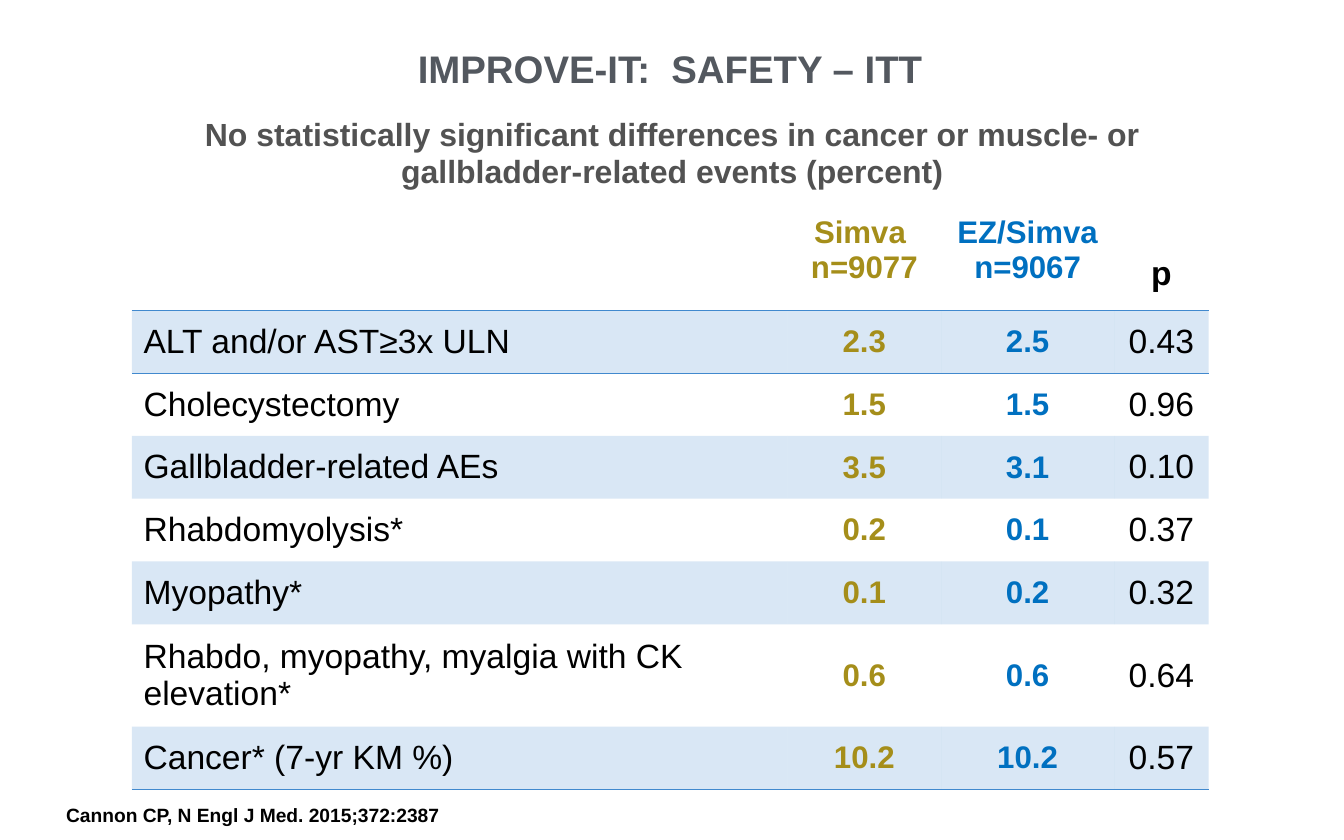
import pptx
import pptx.dml.color
import pptx.enum.text
import pptx.oxml
import pptx.oxml.ns
import pptx.util
import lxml.etree

Cm = pptx.util.Cm
Anchor = pptx.enum.text.MSO_ANCHOR
Align = pptx.enum.text.PP_ALIGN
AutoSize = pptx.enum.text.MSO_AUTO_SIZE
qn = pptx.oxml.ns.qn

GREY, DARK_GREY, BLACK = "53585F", "525252", "000000"
GOLD, BLUE, RULE = "A58E1A", "0070C0", "4189CE"

HEADINGS = ["", "Simva \nn=9077", "EZ/Simva\nn=9067", "p"]
EVENTS = [
    ["ALT and/or AST≥3x ULN", "2.3", "2.5", "0.43"],
    ["Cholecystectomy", "1.5", "1.5", "0.96"],
    ["Gallbladder-related AEs", "3.5", "3.1", "0.10"],
    ["Rhabdomyolysis*", "0.2", "0.1", "0.37"],
    ["Myopathy*", "0.1", "0.2", "0.32"],
    ["Rhabdo, myopathy, myalgia with CK elevation*", "0.6", "0.6", "0.64"],
    ["Cancer* (7-yr KM %)", "10.2", "10.2", "0.57"],
]
COLUMN_WIDTHS = [28.9, 6.78, 7.62, 4.17]
COLUMN_STYLES = [(42, BLACK), (39, GOLD), (39, BLUE), (42, BLACK)]
HEADING_HEIGHT, EVENT_HEIGHT = 4.65, 2.77
NO_STYLE = "{2D5ABB26-0587-4C30-8999-92F81FD0307C}"


def colour(value):
    return pptx.dml.color.RGBColor.from_string(value)


class SafetySlide:
    font = "Arial"

    def __init__(self, deck):
        self.slide = deck.slides.add_slide(deck.slide_layouts[1])

    def set_text(self, frame, text, size, ink, bold=True, align=Align.CENTER):
        frame.text = text
        for paragraph in frame.paragraphs:
            paragraph.alignment = align
            for run in paragraph.runs:
                run.font.name = self.font
                run.font.size = pptx.util.Pt(size)
                run.font.bold = bold
                run.font.color.rgb = colour(ink)

    def inset(self, target, side, top):
        target.margin_left = target.margin_right = Cm(side)
        target.margin_top = target.margin_bottom = Cm(top)

    def heading(self, holder, box, text, size, ink):
        holder.left, holder.top, holder.width, holder.height = map(Cm, box)
        frame = holder.text_frame
        self.set_text(frame, text, size, ink)
        self.inset(frame, 0.18, 0.18)
        frame.vertical_anchor = Anchor.MIDDLE
        frame.word_wrap = True
        frame.auto_size = AutoSize.NONE
        return frame.paragraphs[0]

    def title(self, box, text):
        self.heading(self.slide.shapes.title, box, text, 48, GREY)

    def finding(self, box, text):
        paragraph = self.heading(self.slide.placeholders[1], box, text, 40, DARK_GREY)
        paragraph.line_spacing = 0.95
        paragraph.space_before = pptx.util.Pt(0)
        properties = paragraph._p.get_or_add_pPr()
        properties.set("marL", "0")
        properties.set("indent", "0")
        lxml.etree.SubElement(properties, qn("a:buNone"))

    def citation(self, box, text):
        frame = self.slide.shapes.add_textbox(*map(Cm, box)).text_frame
        self.set_text(frame, text, 24, BLACK)
        self.inset(frame, 0.38, 0.2)
        frame.word_wrap = True
        frame.auto_size = AutoSize.SHAPE_TO_FIT_TEXT

    def rule(self, cell, edge):
        line = lxml.etree.SubElement(
            cell._tc.get_or_add_tcPr(), qn("a:" + edge), w=str(pptx.util.Pt(1)))
        fill = lxml.etree.SubElement(line, qn("a:solidFill"))
        lxml.etree.SubElement(fill, qn("a:srgbClr"), val=RULE)

    def tint(self, cell):
        cell.fill.solid()
        cell.fill.fore_color.rgb = colour(RULE)
        shade = cell._tc.tcPr.find(qn("a:solidFill")).find(qn("a:srgbClr"))
        lxml.etree.SubElement(shade, qn("a:alpha"), val="20000")

    def cell(self, cell, text, row, column, last_row):
        size, ink = COLUMN_STYLES[column]
        is_heading = row == 0
        self.inset(cell, 0.51, 0.48)
        cell.vertical_anchor = Anchor.TOP if is_heading else Anchor.MIDDLE
        if text:
            self.set_text(cell.text_frame, text, size, ink,
                          bold=is_heading or ink != BLACK,
                          align=Align.CENTER if column else Align.LEFT)
        if is_heading and column == len(COLUMN_WIDTHS) - 1:
            cell.vertical_anchor = Anchor.BOTTOM
            cell.margin_bottom = Cm(0.76)
        if row == 1:
            self.rule(cell, "lnT")
        if row in (0, last_row):
            self.rule(cell, "lnB")
        if row % 2:
            self.tint(cell)
        else:
            cell.fill.background()

    def events(self, left, top, rows):
        heights = [HEADING_HEIGHT] + [EVENT_HEIGHT] * (len(rows) - 1)
        table = self.slide.shapes.add_table(
            len(rows), len(COLUMN_WIDTHS), Cm(left), Cm(top),
            Cm(sum(COLUMN_WIDTHS)), Cm(sum(heights))).table
        table._tbl.tblPr.find(qn("a:tableStyleId")).text = NO_STYLE
        for column, width in zip(table.columns, COLUMN_WIDTHS):
            column.width = Cm(width)
        for row, height in zip(table.rows, heights):
            row.height = Cm(height)
        for r, texts in enumerate(rows):
            for c, text in enumerate(texts):
                self.cell(table.cell(r, c), text, r, c, len(rows) - 1)


def main():
    deck = pptx.Presentation()
    deck.slide_width, deck.slide_height = Cm(59.26), Cm(37.03)
    safety = SafetySlide(deck)
    safety.title((2.62, -0.05, 53.87, 6.1), "IMPROVE-IT:  SAFETY – ITT")
    safety.citation((0, 35.2, 22.28, 1.42), "Cannon CP, N Engl J Med. 2015;372:2387")
    safety.finding(
        (5.71, 4.11, 47.85, 5.36),
        "No statistically significant differences in cancer or muscle- or "
        "gallbladder-related events (percent)")
    safety.events(5.82, 9.02, [HEADINGS] + EVENTS)
    deck.save("out.pptx")


if __name__ == "__main__":
    main()
